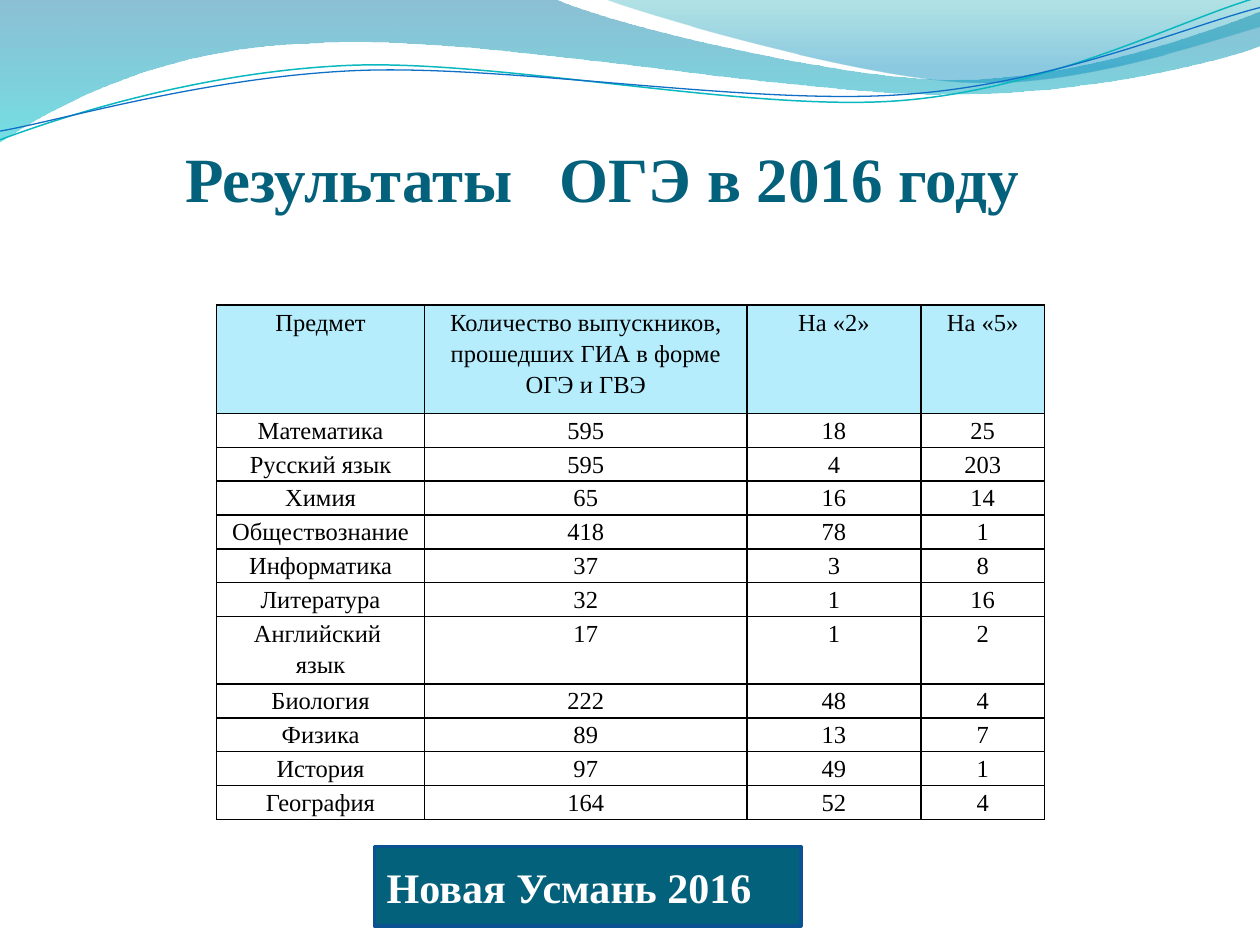
from lxml.etree import SubElement
from pptx import Presentation
from pptx.dml.color import RGBColor
from pptx.enum.shapes import MSO_SHAPE
from pptx.enum.text import MSO_ANCHOR, PP_ALIGN
from pptx.oxml.ns import qn
from pptx.util import Pt

FONT = "Times New Roman"
BLACK = RGBColor(0x00, 0x00, 0x00)
WHITE = RGBColor(0xFF, 0xFF, 0xFF)
TEAL = RGBColor(0x04, 0x61, 0x7B)
HEADER_FILL = RGBColor(0xB5, 0xED, 0xFD)
LABEL_LINE = RGBColor(0x0B, 0x52, 0x92)
LINE_TEAL = RGBColor(0x0A, 0xB8, 0xBF)
LINE_BLUE = RGBColor(0x0F, 0x6F, 0xC6)
DEEP_BLUE = RGBColor(0x00, 0x74, 0xA1)
AQUA = RGBColor(0x00, 0xC6, 0xCF)
SEA_GREEN = RGBColor(0x00, 0xA1, 0xA9)
SKY_BLUE = RGBColor(0x00, 0x8B, 0xBF)


def add_wave(start, segments, closed):
    """Draw lines (x, y) and cubic curves (x1, y1, x2, y2, x, y), in points."""
    fb = s.shapes.build_freeform(Pt(start[0]), Pt(start[1]))
    fb.add_line_segments([(Pt(seg[-2]), Pt(seg[-1])) for seg in segments], close=closed)
    sp = fb.convert_to_shape()
    sp.shadow.inherit = False
    # Turn the straight steps of the curved segments into Bezier curves
    for seg, step in zip(segments, list(sp._element.iter(qn("a:lnTo")))):
        if len(seg) == 6:
            step.tag = qn("a:cubicBezTo")
            end = step[0]
            for x, y in (seg[:2], seg[2:4]):
                SubElement(step, qn("a:pt"), x=str(Pt(x) - sp.left), y=str(Pt(y) - sp.top))
            step.append(end)
    return sp


def add_text(p, text, size, color, bold=False):
    r = p.add_run()
    r.text = text
    r.font.name = FONT
    r.font.size = Pt(size)
    r.font.bold = bold
    r.font.color.rgb = color


prs = Presentation()
prs.slide_width, prs.slide_height = Pt(720), Pt(540)
s = prs.slides.add_slide(prs.slide_layouts[6])

# Wave bands: start, segments, gradient stops (position, colour, opacity)
bands = [
    ((0, 0),
     [(316.8, -0.7), (342.7, 12.2, 478.1, 45.4, 545.8, 45.4),
      (614.2, 45.4, 689.8, 18.7, 720, 6.5), (720.7, 25.9),
      (707.8, 31.7, 626.4, 54.7, 537.1, 54), (447.8, 54, 275, 20.2, 185, 24.5),
      (92.9, 25.9, 33.1, 59.8, -0.7, 81.4)],
     [(0, DEEP_BLUE, 45), (1, AQUA, 55)]),
    ((344.9, -0.7),
     [(366.5, 7.9, 491, 44.6, 553.7, 46.8), (616.3, 49.7, 691.9, 23, 720, 15.1), (720, 0)],
     [(0, SEA_GREEN, 30), (0.8, SKY_BLUE, 45)]),
]
for start, segments, stops in bands:
    sp = add_wave(start, segments, True)
    sp.line.fill.background()
    sp.fill.gradient()
    sp.fill.gradient_angle = 270
    for stop, (position, color, opacity) in zip(sp.fill.gradient_stops, stops):
        stop.position = position
        stop.color.rgb = color
        clr = stop._gs.find(qn("a:srgbClr"))
        SubElement(clr, qn("a:alpha"), val=str(opacity * 1000))

# Thin wave lines
wave_lines = [
    ((0, 79.9),
     [(34.6, 67, 113.8, 41, 199.4, 37.4), (284.4, 33.8, 427, 64.1, 513.4, 57.6),
      (599.8, 51.1, 675.4, 10.8, 718.6, -1.4)], LINE_TEAL, 0.85),
    ((0, 74.9),
     [(33.8, 69.1, 118.1, 43.9, 203.8, 40.3), (290.2, 36.7, 429.8, 60.5, 516.2, 54),
      (601.9, 48.2, 677.5, 15.1, 720, 4.3)], LINE_BLUE, 0.75),
]
for start, segments, color, width in wave_lines:
    sp = add_wave(start, segments, False)
    sp.fill.background()
    sp.line.color.rgb = color
    sp.line.width = Pt(width)

# Title
tf = s.shapes.add_textbox(Pt(105.8), Pt(67.7), Pt(576), Pt(55.4)).text_frame
tf.word_wrap = True
tf.vertical_anchor = MSO_ANCHOR.BOTTOM
tf.margin_left = tf.margin_right = tf.margin_bottom = 0
p = tf.paragraphs[0]
tabs = SubElement(p._p.get_or_add_pPr(), qn("a:tabLst"))
SubElement(tabs, qn("a:tab"), pos=str(Pt(214)), algn="l")
add_text(p, "Результаты\tОГЭ в 2016 году", 36, TEAL, True)

# Results table
rows = [
    ("Предмет", "Количество выпускников, прошедших ГИА в форме ОГЭ и ГВЭ", "На «2»", "На «5»"),
    ("Математика", 595, 18, 25),
    ("Русский язык", 595, 4, 203),
    ("Химия", 65, 16, 14),
    ("Обществознание", 418, 78, 1),
    ("Информатика", 37, 3, 8),
    ("Литература", 32, 1, 16),
    ("Английский \nязык", 17, 1, 2),
    ("Биология", 222, 48, 4),
    ("Физика", 89, 13, 7),
    ("История", 97, 49, 1),
    ("География", 164, 52, 4),
]
col_widths = (118.8, 184.3, 99.4, 70.6)
table_height = 274.3
frame = s.shapes.add_table(len(rows), len(col_widths), Pt(123.8), Pt(174.4),
                           Pt(sum(col_widths)), Pt(table_height))
table = frame.table
table.first_row = table.horz_banding = False
for col, width in zip(table.columns, col_widths):
    col.width = Pt(width)
for i, values in enumerate(rows):
    # Body rows grow to fit their text
    table.rows[i].height = Pt(0 if i else 61.9)
    for j, value in enumerate(values):
        cell = table.cell(i, j)
        cell.margin_left = cell.margin_right = Pt(5)
        cell.margin_top = cell.margin_bottom = 0
        tcPr = cell._tc.get_or_add_tcPr()
        for side in ("a:lnL", "a:lnR", "a:lnT", "a:lnB"):
            ln = SubElement(tcPr, qn(side), w=str(Pt(1)))
            SubElement(SubElement(ln, qn("a:solidFill")), qn("a:srgbClr"), val=str(BLACK))
        if i == 0:
            cell.fill.solid()
            cell.fill.fore_color.rgb = HEADER_FILL
        else:
            cell.fill.background()
        p = cell.text_frame.paragraphs[0]
        p.alignment = PP_ALIGN.CENTER
        p.line_spacing = 1.15
        for k, part in enumerate(str(value).split("\n")):
            if k:
                p.add_line_break()
            add_text(p, part, 14, BLACK)
frame.height = Pt(table_height)

# Place and year label
sp = s.shapes.add_shape(MSO_SHAPE.RECTANGLE, Pt(213.9), Pt(483.8), Pt(243.7), Pt(45.4))
sp.shadow.inherit = False
sp.fill.solid()
sp.fill.fore_color.rgb = TEAL
sp.line.color.rgb = LABEL_LINE
sp.line.width = Pt(2)
tf = sp.text_frame
tf.word_wrap = True
tf.vertical_anchor = MSO_ANCHOR.MIDDLE
p = tf.paragraphs[0]
p.alignment = PP_ALIGN.LEFT
add_text(p, "Новая Усмань 2016", 24, WHITE, True)

prs.save("out.pptx")
